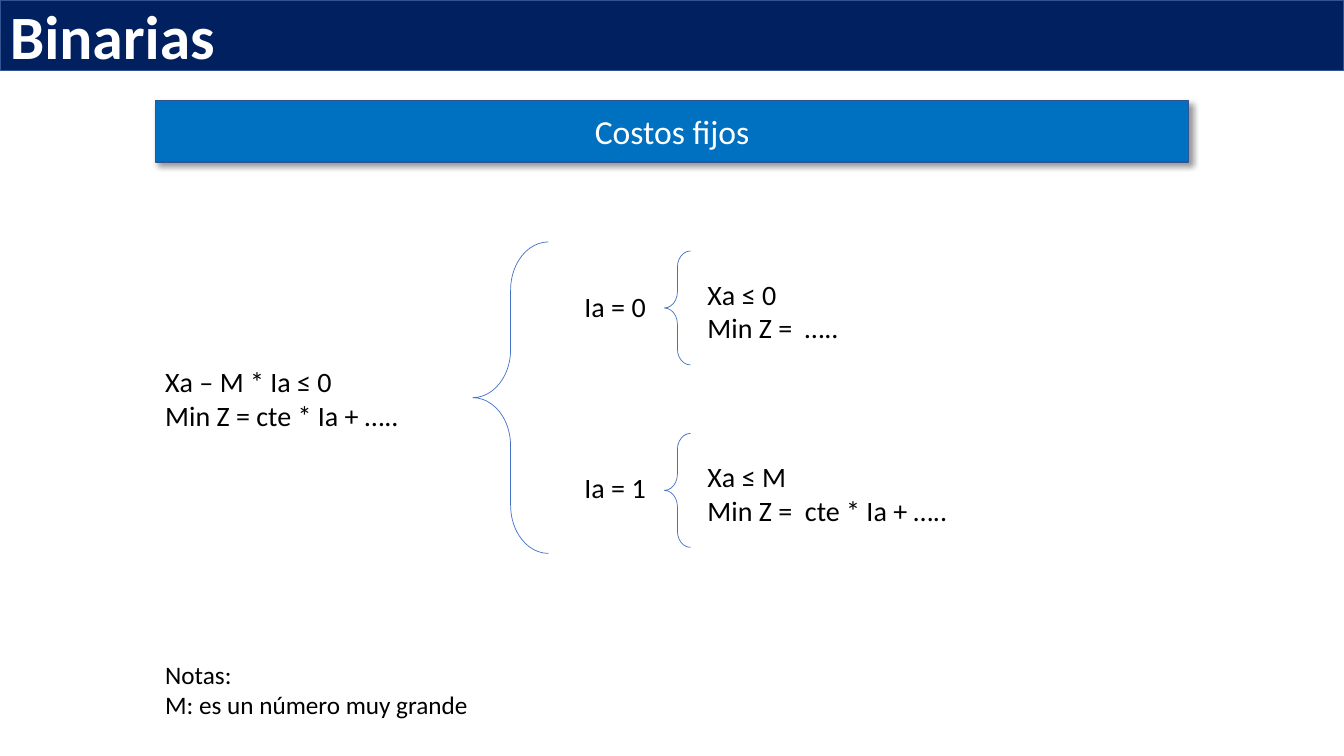
from lxml.etree import SubElement
from pptx import Presentation
from pptx.dml.color import RGBColor
from pptx.enum.shapes import MSO_SHAPE
from pptx.enum.text import MSO_ANCHOR, PP_ALIGN
from pptx.oxml.ns import qn
from pptx.util import Inches, Pt

COLORS = {"navy": "002060", "blue": "0070C0", "edge": "325491",
          "brace": "4472C4", "white": "FFFFFF", "black": "000000"}

prs = Presentation()
prs.slide_width, prs.slide_height = Inches(13.33), Inches(7.5)
slide = prs.slides.add_slide(prs.slide_layouts[6])


def add_box(area, kind=None, fill=None, line=None, weight=1, adjust=None):
    """Add a preset shape or a text box; area is in percent of the slide."""
    sizes = (prs.slide_width, prs.slide_height) * 2
    place = [int(size * share / 100) for size, share in zip(sizes, area)]
    if kind is None:
        return slide.shapes.add_textbox(*place)
    shape = slide.shapes.add_shape(kind, *place)
    shape.shadow.inherit = False
    shape.fill.background()
    if fill:
        shape.fill.solid()
        shape.fill.fore_color.rgb = RGBColor.from_string(COLORS[fill])
    shape.line.color.rgb = RGBColor.from_string(COLORS[line])
    shape.line.width = Pt(weight)
    if adjust:
        shape.adjustments[0] = adjust
    return shape


def write(shape, text, size, color="black", bold=False,
          align=PP_ALIGN.LEFT, anchor=MSO_ANCHOR.MIDDLE):
    frame = shape.text_frame
    frame.text = text
    frame.word_wrap = True
    frame.vertical_anchor = anchor
    for paragraph in frame.paragraphs:
        paragraph.alignment = align
        for run in paragraph.runs:
            run.font.name = "Calibri"
            run.font.size = Pt(size)
            run.font.bold = bold
            run.font.color.rgb = RGBColor.from_string(COLORS[color])


# Title bar
title = add_box((0, 0, 100, 9.33), MSO_SHAPE.RECTANGLE, "navy", "edge")
write(title, "Binarias", 44, "white", bold=True)

# Topic banner with its shadow
margin = 11.55
topic = add_box((margin, 13.33, 100 - 2 * margin, 8.13),
                MSO_SHAPE.RECTANGLE, "blue", "edge")
write(topic, "Costos fijos", 24, "white", align=PP_ALIGN.CENTER)
effects = topic._element.spPr.find(qn("a:effectLst"))
shadow = SubElement(effects, qn("a:outerShdw"), blurRad=str(Pt(4)),
                    dist=str(Pt(3)), dir=str(45 * 60000), algn="tl", rotWithShape="0")
shade = SubElement(shadow, qn("a:srgbClr"), val=COLORS["black"])
SubElement(shade, qn("a:alpha"), val="40000")

# General model and notes
model = add_box((margin, 48, 22.13, 9.33))
write(model, "Xa – M * Ia ≤ 0\nMin Z = cte * Ia + …..", 20)
notes = add_box((margin, 86.53, 51.08, 9.47))
write(notes, "Notas:\nM: es un número muy grande", 18, anchor=MSO_ANCHOR.TOP)

# Brace opening the two cases
add_box((35.18, 32, 5.63, 41.2), MSO_SHAPE.LEFT_BRACE,
        line="brace", weight=0.5, adjust=0.637)

# Cases: value of the binary variable, brace, resulting model
cases = [("Ia = 0", 35.87, "Xa ≤ 0\nMin Z =  ….."),
         ("Ia = 1", 59.73, "Xa ≤ M\nMin Z =  cte * Ia + …..")]
for row, (value, value_top, result) in enumerate(cases):
    top = 33.2 + row * 24.13
    write(add_box((42.75, value_top, 7.65, 9.33)), value, 20)
    add_box((49.43, top, 1.95, 15.07), MSO_SHAPE.LEFT_BRACE,
            line="brace", weight=0.5, adjust=0.616)
    write(add_box((51.9, top + 2.8, 34.6, 10.27)), result, 20,
          anchor=MSO_ANCHOR.TOP)

prs.save("out.pptx")
